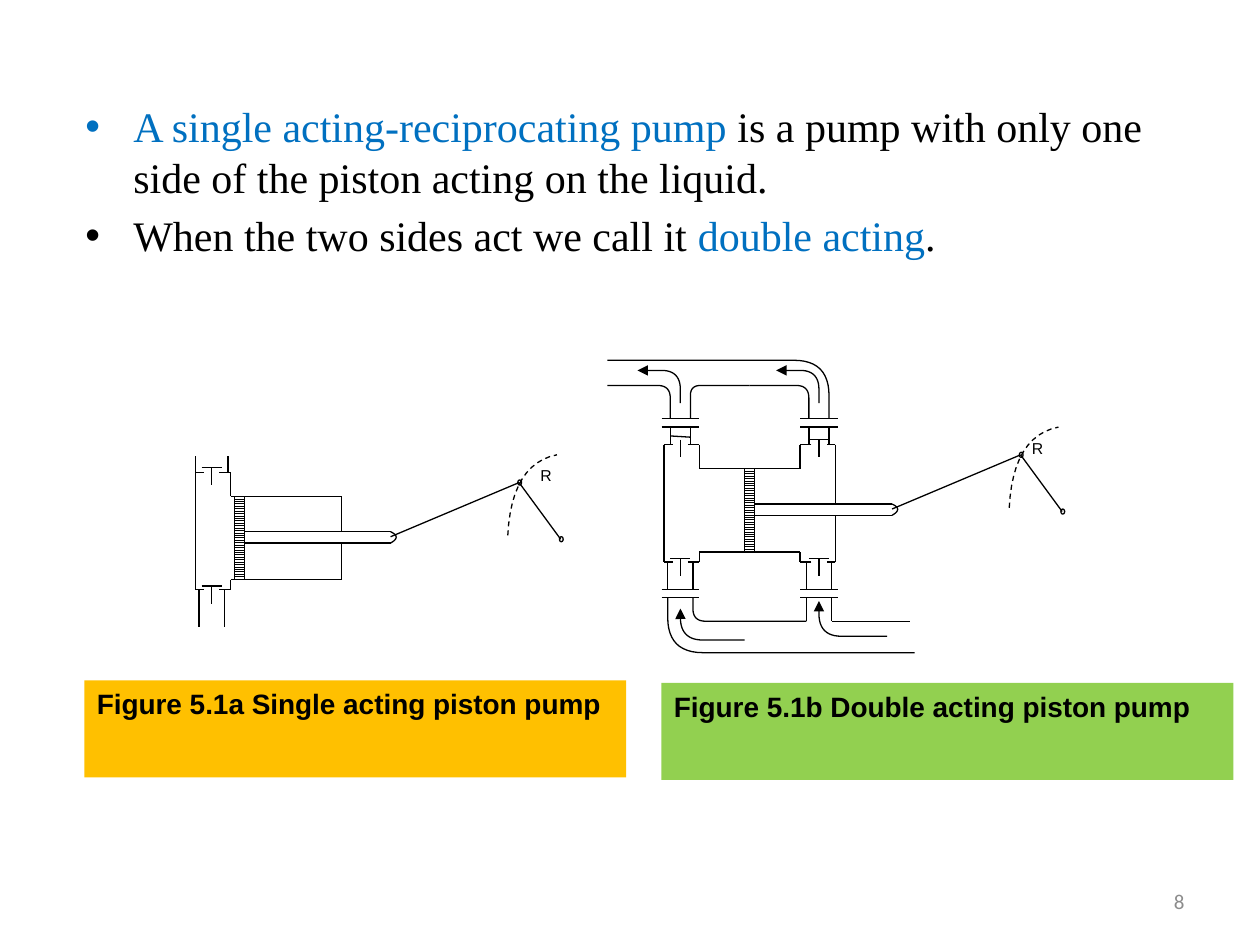
from dataclasses import dataclass

from lxml import etree
from pptx import Presentation
from pptx.dml.color import RGBColor
from pptx.enum.dml import MSO_LINE, MSO_PATTERN
from pptx.enum.shapes import MSO_CONNECTOR, MSO_SHAPE
from pptx.enum.text import MSO_ANCHOR, PP_ALIGN
from pptx.oxml.ns import qn
from pptx.util import Pt

PX = 9144  # 100 px to the inch
STRAIGHT = MSO_CONNECTOR.STRAIGHT
RECTANGLE, OVAL = MSO_SHAPE.RECTANGLE, MSO_SHAPE.OVAL
HORIZONTAL_HATCH, DASH = MSO_PATTERN.LIGHT_HORIZONTAL, MSO_LINE.DASH
MIDDLE, RIGHT = MSO_ANCHOR.MIDDLE, PP_ALIGN.RIGHT

# Pump sizes; heights are counted down from the top of the valve chamber
CHAMBER_WIDTH, CHAMBER_HEIGHT = 28, 93
PORT_INSET, PORT_HALF = 13, 6
BORE_TOP, BORE_BOTTOM = 19, 85
ROD_TOP, ROD_MIDDLE, ROD_BOTTOM = 47, 51, 56
PISTON_WIDTH = 8
VALVE_HALF, VALVE_STEM, VALVE_LEVELS = 8, 14, (-4, 90)
FLANGE_HALF = 15
INLET_HALF, OUTLET_HALF = 10, 8
CURVE_STEPS = 12


@dataclass(frozen=True)
class Theme:
    black: str = "000000"
    white: str = "FFFFFF"
    blue: str = "0070C0"
    amber: str = "FFC000"
    green: str = "92D050"
    gray: str = "8C8C8C"
    stroke: float = 0.75
    body: int = 24
    caption: int = 16
    number: int = 12
    label: int = 9


THEME = Theme()


def color(value):
    return RGBColor.from_string(value)


def set_stroke(line, dash=None):
    line.color.rgb = color(THEME.black)
    for name, value in {"width": Pt(THEME.stroke), "dash_style": dash}.items():
        setattr(line, name, value)


# Drawing elements
def add_line(slide, x1, y1, x2, y2):
    connector = slide.shapes.add_connector(STRAIGHT, *(v * PX for v in (x1, y1, x2, y2)))
    set_stroke(connector.line)
    etree.SubElement(connector._element.spPr, qn("a:effectLst"))


def add_bend(slide, start, corner, end, radius=None, dash=None, arrow=False):
    """Two legs joined by a curve; without a radius the curve takes both legs whole."""
    def on_leg(target):
        length = max(abs(t - c) for t, c in zip(target, corner))
        share = min(1, radius / length) if radius else 1
        return [c + (t - c) * share for t, c in zip(target, corner)]

    curve_start, curve_end = on_leg(start), on_leg(end)
    points = []
    for step in range(CURVE_STEPS + 1):
        t = step / CURVE_STEPS
        points.append([(1 - t) ** 2 * a + 2 * t * (1 - t) * c + t * t * b
                       for a, c, b in zip(curve_start, corner, curve_end)])
    builder = slide.shapes.build_freeform(start[0] * PX, start[1] * PX, scale=1.0)
    builder.add_line_segments([(round(x * PX), round(y * PX)) for x, y in points + [end]],
                              close=False)
    shape = builder.convert_to_shape()
    shape.shadow.inherit = False
    shape.fill.background()
    set_stroke(shape.line, dash)
    if arrow:
        etree.SubElement(shape.line._get_or_add_ln(), qn("a:tailEnd"), type="triangle")


def add_outline(slide, kind, box):
    shape = slide.shapes.add_shape(kind, *(v * PX for v in box))
    shape.shadow.inherit = False
    shape.fill.background()
    set_stroke(shape.line)
    return shape


# Text elements
def add_text(slide, box):
    text_box = slide.shapes.add_textbox(*(v * PX for v in box))
    text_box.text_frame.word_wrap = True
    return text_box


def add_run(paragraph, text, size, font, text_color, bold=False):
    run = paragraph.add_run()
    run.text = text
    for name, value in {"size": Pt(size), "name": font, "bold": bold}.items():
        setattr(run.font, name, value)
    run.font.color.rgb = color(text_color)


def add_bullets(slide, box, items):
    frame = add_text(slide, box).text_frame
    for index, runs in enumerate(items):
        paragraph = frame.add_paragraph() if index else frame.paragraphs[0]
        paragraph.space_before = Pt(THEME.body * 0.2)
        properties = paragraph._p.get_or_add_pPr()
        for name, value in {"marL": 38 * PX, "indent": -38 * PX}.items():
            properties.set(name, str(value))
        etree.SubElement(properties, qn("a:buFont"), typeface="Arial")
        etree.SubElement(properties, qn("a:buChar"), char="•")
        for text, text_color in runs:
            add_run(paragraph, text, THEME.body, "Times New Roman", text_color)


def add_caption(slide, box, fill, text):
    caption = add_text(slide, box)
    caption.fill.solid()
    caption.fill.fore_color.rgb = color(fill)
    add_run(caption.text_frame.paragraphs[0], text, THEME.caption, "Arial", THEME.black, True)


# Pump parts
def add_valve(slide, x, y, is_open=False):
    left_y, right_y = (y - 3, y - 2) if is_open else (y, y)
    add_line(slide, x, y, x, y + VALVE_STEM)
    add_line(slide, x - VALVE_HALF, left_y, x + VALVE_HALF, right_y)


def add_pierced_wall(slide, x, top, start, end):
    """Wall with a hole for the piston rod."""
    add_line(slide, x, top + start, x, top + ROD_TOP)
    add_line(slide, x, top + ROD_BOTTOM, x, top + end)


def add_chamber(slide, outer, top, side=1, open_outlet=False):
    """Valve chamber from its outer wall; side is 1 when it opens rightwards, else -1."""
    inner, port = outer + side * CHAMBER_WIDTH, outer + side * PORT_INSET
    bottom = top + CHAMBER_HEIGHT
    if side > 0:
        add_line(slide, outer, top, outer, bottom)
    else:
        add_pierced_wall(slide, outer, top, 0, CHAMBER_HEIGHT)
    for rim, bore in ((top, top + BORE_TOP), (bottom, top + BORE_BOTTOM)):
        add_line(slide, inner, rim, inner, bore)
        add_line(slide, outer, rim, port - side * PORT_HALF, rim)
        add_line(slide, port + side * PORT_HALF, rim, inner, rim)
    for level in VALVE_LEVELS:
        add_valve(slide, port, top + level, open_outlet and level < 0)
    return port


def add_cylinder(slide, left, right, top):
    for bore in (BORE_TOP, BORE_BOTTOM):
        add_line(slide, left, top + bore, right, top + bore)


def add_piston(slide, left, rod_end, top):
    for edge in (ROD_TOP, ROD_BOTTOM):
        add_line(slide, left + PISTON_WIDTH, top + edge, rod_end, top + edge)
    box = (left, top + BORE_TOP, PISTON_WIDTH, BORE_BOTTOM - BORE_TOP)
    fill = add_outline(slide, RECTANGLE, box).fill
    fill.patterned()
    fill.pattern = HORIZONTAL_HATCH
    fill.fore_color.rgb = color(THEME.black)
    fill.back_color.rgb = color(THEME.white)


def add_crank(slide, rod_end, top, label_left):
    x, y = rod_end, top + ROD_MIDDLE
    pin, shaft = (x + 102, y - 43), (x + 135, y + 2)
    add_bend(slide, (x, top + ROD_TOP), (x + 9, y), (x, top + ROD_BOTTOM))
    add_line(slide, x, y, *pin)
    add_line(slide, *pin, *shaft)
    add_bend(slide, (x + 93, y - 1), (x + 96, y - 58), (x + 132, y - 65), dash=DASH)
    for joint_x, joint_y in (pin, shaft):
        add_outline(slide, OVAL, (joint_x - 1, joint_y - 2, 3, 4))
    label = add_text(slide, (label_left, y - 61, 62, 76)).text_frame
    add_run(label.paragraphs[0], "R", THEME.label, "Arial", THEME.black)


def add_pipe(slide, center, half, start, end):
    for x in (center - half, center + half):
        add_line(slide, x, start, x, end)


def add_flange(slide, center, levels):
    for y in levels:
        add_line(slide, center - FLANGE_HALF, y, center + FLANGE_HALF, y)


# Whole pumps
def add_single_pump(slide):
    outer, top, cylinder_end, rod_end = 155, 375, 271, 310
    bottom, inner = top + CHAMBER_HEIGHT, outer + CHAMBER_WIDTH
    port = add_chamber(slide, outer, top)
    add_cylinder(slide, inner, cylinder_end, top)
    add_pierced_wall(slide, cylinder_end, top, BORE_TOP, BORE_BOTTOM)
    add_pipe(slide, port, PORT_INSET, top, top - 13)
    add_pipe(slide, port, INLET_HALF, bottom, bottom + 30)
    add_piston(slide, inner + 3, rod_end, top)
    add_crank(slide, rod_end, top, label_left=419)


def add_double_pump(slide):
    left, right, top, rod_end = 527, 663, 353, 708
    bottom = top + CHAMBER_HEIGHT
    outlet_flange, inlet_flange = (332, 339), (468, 474)
    ports = [add_chamber(slide, left, top, open_outlet=True),
             add_chamber(slide, right, top, side=-1)]
    add_cylinder(slide, left + CHAMBER_WIDTH, right - CHAMBER_WIDTH, top)
    add_piston(slide, 591, rod_end, top)
    add_crank(slide, rod_end, top, label_left=809)
    for port in ports:
        add_pipe(slide, port, OUTLET_HALF, outlet_flange[1], top)
        add_pipe(slide, port, INLET_HALF, bottom, inlet_flange[0])
        add_flange(slide, port, outlet_flange)
        add_flange(slide, port, inlet_flange)
    add_outlet_pipes(slide, ports, outlet_flange[0])
    add_inlet_pipes(slide, ports, inlet_flange[1])


def add_outlet_pipes(slide, ports, flange):
    start, upper, lower, flow = 482, 286, 306, 294
    first, second = ports
    gap_middle = (first + second) // 2
    far_side, near_side = second + OUTLET_HALF, first + OUTLET_HALF
    add_bend(slide, (start, upper), (far_side, upper), (far_side, flange), 28)
    add_bend(slide, (gap_middle, lower), (near_side, lower), (near_side, flange), 8)
    for port, left in ((first, start), (second, gap_middle)):
        side = port - OUTLET_HALF
        add_bend(slide, (left, lower), (side, lower), (side, flange), 10)
        add_bend(slide, (port, 320), (port, flow), (port - 34, flow), 15, arrow=True)


def add_inlet_pipes(slide, ports, flange):
    upper, lower = 493, 518
    first, second = ports
    outer, inner = first - INLET_HALF, first + INLET_HALF
    before, after = second - INLET_HALF, second + INLET_HALF
    add_bend(slide, (outer, flange), (outer, lower), (726, lower), 28)
    add_bend(slide, (inner, flange), (inner, upper), (before, upper), 10)
    add_line(slide, before, upper, before, flange)
    add_line(slide, after, flange, after, upper)
    add_line(slide, after, upper, 722, upper)
    for port, start, flow, tip in ((first, 591, 508, 483), (second, 704, 505, 477)):
        add_bend(slide, (start, flow), (port, flow), (port, tip), 18, arrow=True)


def main():
    presentation = Presentation()
    presentation.slide_width, presentation.slide_height = 1000 * PX, 750 * PX
    slide = presentation.slides.add_slide(presentation.slide_layouts[6])

    # Definitions
    add_bullets(slide, (58, 75, 900, 217), [
        [("A single acting-reciprocating pump ", THEME.blue),
         ("is a pump with only one side of the piston acting on the liquid.", THEME.black)],
        [("When the two sides act we call it ", THEME.black),
         ("double acting", THEME.blue), (".", THEME.black)],
    ])

    # Pumps and their captions
    add_single_pump(slide)
    add_double_pump(slide)
    add_caption(slide, (67, 540, 430, 77), THEME.amber, "Figure 5.1a Single acting piston pump")
    add_caption(slide, (525, 542, 454, 77), THEME.green, "Figure 5.1b Double acting piston pump")

    # Slide number
    number = add_text(slide, (717, 695, 233, 40)).text_frame
    number.vertical_anchor = MIDDLE
    number.paragraphs[0].alignment = RIGHT
    add_run(number.paragraphs[0], "8", THEME.number, "Calibri", THEME.gray)

    presentation.save("out.pptx")


if __name__ == "__main__":
    main()
